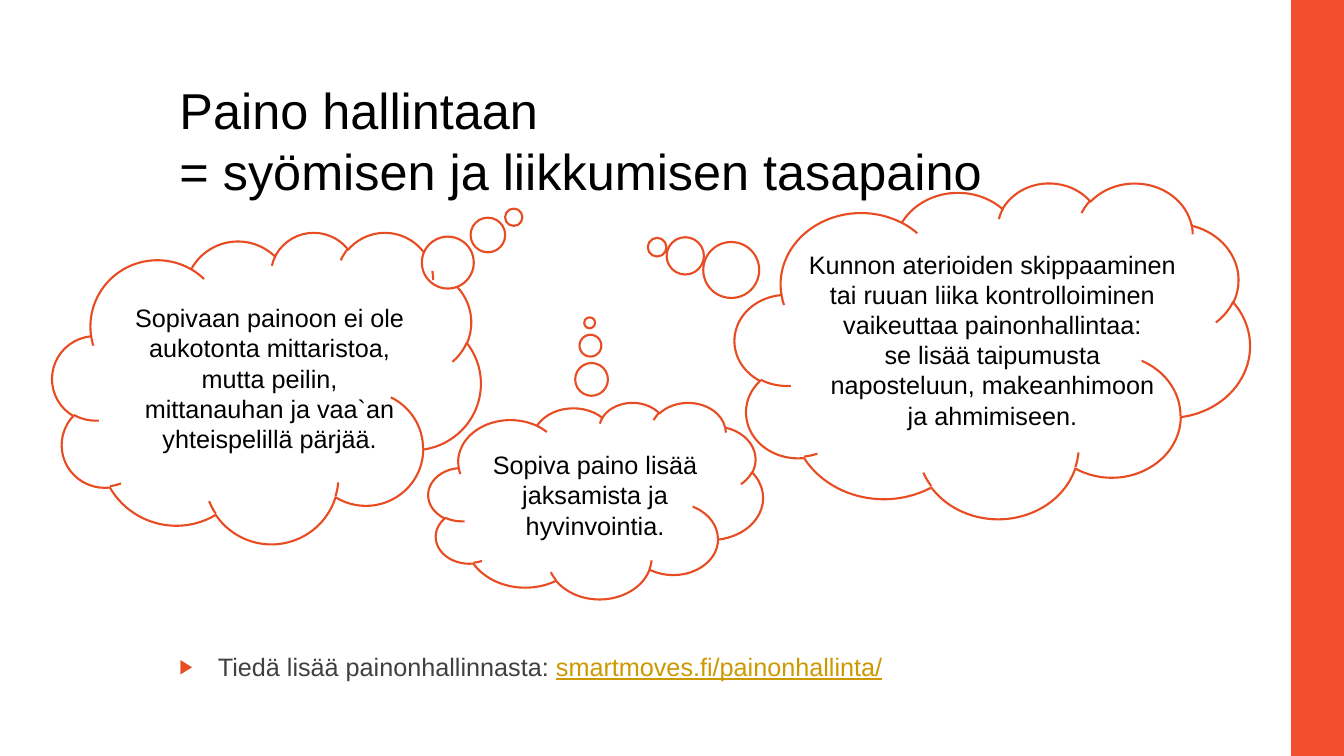
import lxml.etree
import pptx
import pptx.dml.color
import pptx.enum.shapes
import pptx.enum.text
import pptx.oxml.ns
import pptx.util

Pt = pptx.util.Pt
Align = pptx.enum.text.PP_ALIGN
Anchor = pptx.enum.text.MSO_ANCHOR
Shape = pptx.enum.shapes.MSO_SHAPE

# Content: lengths in points, boxes as left, top, width, height
FONT = "Arial"
BLACK, GREY, WHITE = "000000", "404040", "FFFFFF"
ORANGE, BAR_RED, GOLD = "E84C22", "F14E2D", "CC9900"

TITLE = ["Paino hallintaan", "= syömisen ja liikkumisen tasapaino"]
TITLE_BOX = (121, 48.2, 702, 103.7)
LINK_LINE = [("Tiedä lisää painonhallinnasta: ", GREY, False),
             ("smartmoves.fi/painonhallinta/", GOLD, True)]
LINK_BOX = (121, 461.5, 702, 49.7)
BULLET_INDENT = 27.4
SIDE_BAR = (922.3, 0, 37.7, 540)

CLOUDS = [
    dict(box=(524.9, 130.3, 367.9, 239.8), tail=(-0.651, -0.307),
         text_box=(565.2, 174.2, 287.3, 138.2),
         lines=["Kunnon aterioiden skippaaminen",
                "tai ruuan liika kontrolloiminen vaikeuttaa painonhallintaa:",
                "se lisää taipumusta",
                "naposteluun, makeanhimoon",
                "ja ahmimiseen."]),
    dict(box=(306, 287.3, 239, 140.4), tail=(-0.018, -0.904),
         text_box=(318.2, 317.5, 213.8, 72.7),
         lines=["Sopiva paino lisää jaksamista ja hyvinvointia."]),
    dict(box=(37.4, 165.6, 306, 222.5), tail=(0.577, -0.547),
         text_box=(89.3, 212.4, 206.6, 116.6),
         lines=["Sopivaan painoon ei ole aukotonta mittaristoa, mutta peilin, "
                "mittanauhan ja vaa`an yhteispelillä pärjää."]),
]


def color(value):
    return pptx.dml.color.RGBColor.from_string(value)


def place(shape, box):
    shape.left, shape.top, shape.width, shape.height = map(Pt, box)


def write(para, text, size=18, fill=BLACK, underline=False):
    span = para.add_run()
    span.text = text
    span.font.name = FONT
    span.font.size = Pt(size)
    span.font.color.rgb = color(fill)
    span.font.underline = underline


def prepare(frame, anchor=Anchor.TOP):
    frame.word_wrap = True
    frame.auto_size = pptx.enum.text.MSO_AUTO_SIZE.NONE
    frame.vertical_anchor = anchor
    return frame.paragraphs[0]


def add_bullet(para):
    properties = para._p.get_or_add_pPr()
    properties.set("marL", str(Pt(BULLET_INDENT)))
    properties.set("indent", str(-Pt(BULLET_INDENT)))

    def child(parent, tag, **values):
        return lxml.etree.SubElement(parent, pptx.oxml.ns.qn(tag), **values)

    child(child(properties, "a:buClr"), "a:srgbClr", val=ORANGE)
    child(properties, "a:buSzPct", val="80000")
    child(properties, "a:buFont", typeface=FONT)
    child(properties, "a:buChar", char="▶")


def add_shape(page, kind, box, fill, line=None):
    shape = page.shapes.add_shape(kind, *map(Pt, box))
    shape.shadow.inherit = False
    shape.fill.solid()
    shape.fill.fore_color.rgb = color(fill)
    if line:
        shape.line.color.rgb = color(line)
        shape.line.width = Pt(1.5)
    else:
        shape.line.fill.background()
    return shape


def add_cloud(page, box, tail, text_box, lines):
    cloud = add_shape(page, Shape.CLOUD_CALLOUT, box, WHITE, ORANGE)
    for index, value in enumerate(tail):
        cloud.adjustments[index] = value
    frame = page.shapes.add_textbox(*map(Pt, text_box)).text_frame
    para = prepare(frame)
    for index, line in enumerate(lines):
        if index:
            para = frame.add_paragraph()
        para.alignment = Align.CENTER
        write(para, line)


def main():
    deck = pptx.Presentation()
    deck.slide_width, deck.slide_height = Pt(960), Pt(540)
    page = deck.slides.add_slide(deck.slide_layouts[1])

    # Title
    title = page.shapes.title
    place(title, TITLE_BOX)
    para = prepare(title.text_frame, Anchor.MIDDLE)
    para.alignment = Align.LEFT
    for index, line in enumerate(TITLE):
        if index:
            para.add_line_break()
        write(para, line, size=36)

    # Bulleted link line
    body = page.placeholders[1]
    place(body, LINK_BOX)
    para = prepare(body.text_frame)
    para.space_before = Pt(0)
    add_bullet(para)
    for text, fill, underline in LINK_LINE:
        write(para, text, fill=fill, underline=underline)

    # Side bar and thought clouds
    add_shape(page, Shape.RECTANGLE, SIDE_BAR, BAR_RED)
    for cloud in CLOUDS:
        add_cloud(page, **cloud)

    deck.save("out.pptx")


if __name__ == "__main__":
    main()
